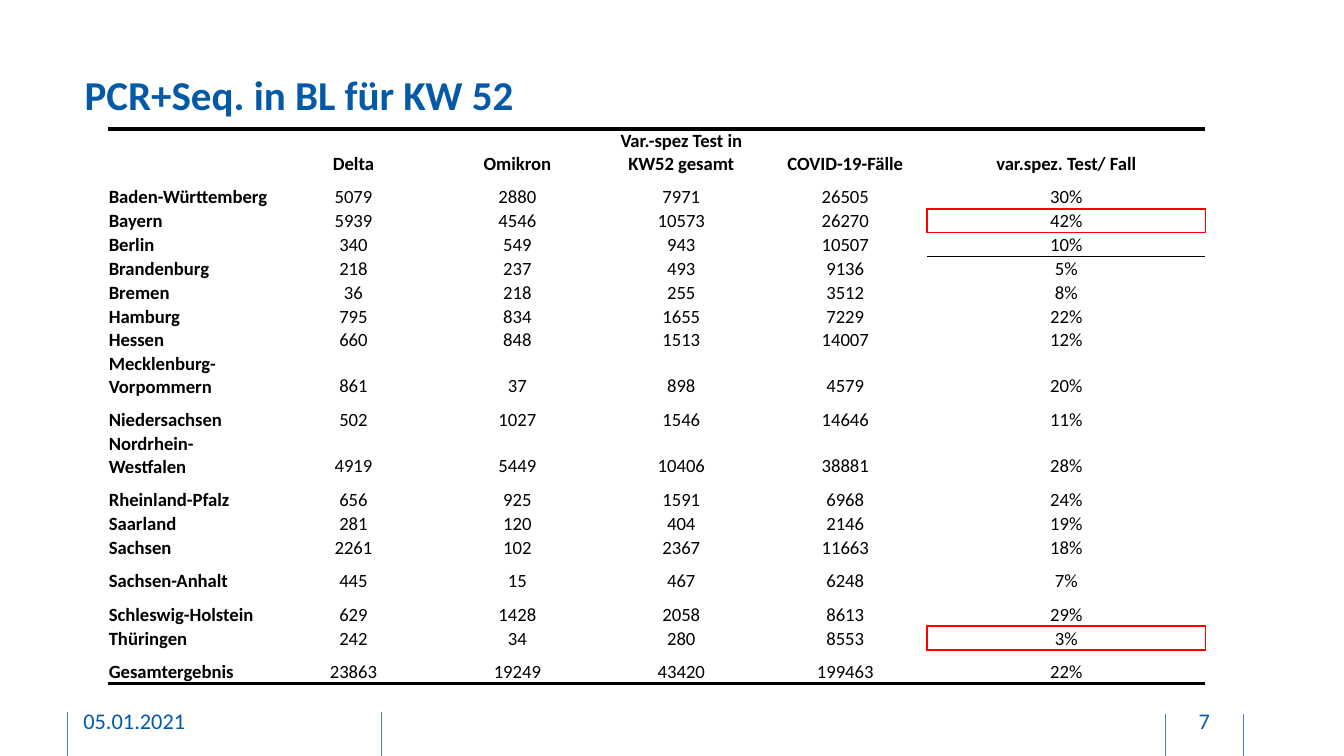
"""Build the slide with the share of variant-specific PCR tests per federal state."""
from dataclasses import dataclass

from lxml import etree
from pptx import Presentation
from pptx.dml.color import RGBColor
from pptx.enum.shapes import MSO_CONNECTOR
from pptx.enum.text import MSO_ANCHOR, PP_ALIGN
from pptx.oxml.ns import qn
from pptx.util import Inches, Pt

LEFT, CENTER = PP_ALIGN.LEFT, PP_ALIGN.CENTER
MIDDLE, BOTTOM = MSO_ANCHOR.MIDDLE, MSO_ANCHOR.BOTTOM
STRAIGHT = MSO_CONNECTOR.STRAIGHT
NO_GRID_STYLE = "{2D5ABB26-0587-4C30-8999-92F81FD0307C}"


@dataclass(frozen=True)
class Theme:
    font: str = "Calibri"
    blue: str = "045AA6"
    rule: str = "4F81BD"
    black: str = "000000"
    white: str = "FFFFFF"
    red: str = "FF0000"
    title: int = 22
    footer: int = 12
    body: int = 10


T = Theme()


def add_text(tf, text, size=T.body, color=T.black, bold=False, align=LEFT):
    tf.word_wrap = True
    p = tf.paragraphs[0]
    p.alignment = align
    p.font.size = Pt(size)
    if text:
        r = p.add_run()
        r.text = text
        r.font.name, r.font.size, r.font.bold = T.font, Pt(size), bold
        r.font.color.rgb = RGBColor.from_string(color)


def add_border(cell, side, color, width):
    ln = etree.SubElement(cell._tc.get_or_add_tcPr(), qn(f"a:ln{side}"), w=str(Pt(width)))
    fill = etree.SubElement(ln, qn("a:solidFill"))
    etree.SubElement(fill, qn("a:srgbClr"), val=color)


prs = Presentation()
prs.slide_width, prs.slide_height = Inches(10), Inches(10 * 9 / 16)
s = prs.slides.add_slide(prs.slide_layouts[6])

for x, y in [(8.67, 5.31), (2.84, 5.3), (0.5, 5.3), (9.25, 5.31)]:
    line = s.shapes.add_connector(STRAIGHT, Inches(x), Inches(y), Inches(x), Inches(y + 0.34))
    line.line.color.rgb = RGBColor.from_string(T.rule)
    line.line.width = Pt(0.5)
    etree.SubElement(line._element.spPr, qn("a:effectLst"))

for text, box, inset, style in [
    ("05.01.2021", (0.62, 5.21, 2.03, 0.3), 0.05, dict(size=T.footer)),
    ("7", (8.69, 5.21, 0.54, 0.3), 0.05, dict(size=T.footer, align=CENTER)),
    ("PCR+Seq. in BL für KW 52", (0.63, 0.31, 8.73, 0.78), 0, dict(size=T.title, bold=True)),
]:
    tf = s.shapes.add_textbox(*map(Inches, box)).text_frame
    tf.margin_left = tf.margin_right = 0
    tf.margin_top = tf.margin_bottom = Inches(inset)
    tf.vertical_anchor = MIDDLE
    add_text(tf, text, color=T.blue, **style)

rows = [
    ("", "Delta", "Omikron", "Var.-spez Test in KW52 gesamt", "COVID-19-Fälle", "var.spez. Test/ Fall"),
    ("Baden-Württemberg", "5079", "2880", "7971", "26505", "30%"),
    ("Bayern", "5939", "4546", "10573", "26270", "42%"),
    ("Berlin", "340", "549", "943", "10507", "10%"),
    ("Brandenburg", "218", "237", "493", "9136", "5%"),
    ("Bremen", "36", "218", "255", "3512", "8%"),
    ("Hamburg", "795", "834", "1655", "7229", "22%"),
    ("Hessen", "660", "848", "1513", "14007", "12%"),
    ("Mecklenburg-Vorpommern", "861", "37", "898", "4579", "20%"),
    ("Niedersachsen", "502", "1027", "1546", "14646", "11%"),
    ("Nordrhein-Westfalen", "4919", "5449", "10406", "38881", "28%"),
    ("Rheinland-Pfalz", "656", "925", "1591", "6968", "24%"),
    ("Saarland", "281", "120", "404", "2146", "19%"),
    ("Sachsen", "2261", "102", "2367", "11663", "18%"),
    ("Sachsen-Anhalt", "445", "15", "467", "6248", "7%"),
    ("Schleswig-Holstein", "629", "1428", "2058", "8613", "29%"),
    ("Thüringen", "242", "34", "280", "8553", "3%"),
    ("Gesamtergebnis", "23863", "19249", "43420", "199463", "22%"),
]
tall_rows = {0, 1, 8, 9, 10, 11, 14, 15, 17}
last_row, last_col = len(rows) - 1, len(rows[0]) - 1

borders = {}
for c in range(last_col + 1):
    borders[0, c, "T"] = borders[last_row, c, "B"] = (T.black, 2)
for i, row in enumerate(rows):
    if row[0] in ("Bayern", "Thüringen"):
        for side in "LRTB":
            borders[i, last_col, side] = (T.red, 1)
        borders[i, last_col - 1, "R"] = (T.red, 1)
        borders[i - 1, last_col, "B"] = borders[i + 1, last_col, "T"] = (T.red, 1)
    if row[0] == "Berlin":
        borders[i, last_col, "B"] = (T.black, 0.5)

frame = s.shapes.add_table(len(rows), len(rows[0]), Inches(0.8), Inches(0.96), Inches(8.16), Inches(4.12))
table = frame.table
table.first_row = table.horz_banding = False
table._tbl.tblPr.find(qn("a:tableStyleId")).text = NO_GRID_STYLE
for c, column in enumerate(table.columns):
    column.width = Inches(2.07 if c == last_col else 1.22)

for i, row in enumerate(rows):
    table.rows[i].height = Inches(0.25 if i in tall_rows else 0.14)
    for c, text in enumerate(row):
        cell = table.cell(i, c)
        cell.margin_left = cell.margin_right = cell.margin_top = Inches(0.01)
        cell.margin_bottom = 0
        cell.vertical_anchor = BOTTOM
        for side in "LRTB":
            if (i, c, side) in borders:
                add_border(cell, side, *borders[i, c, side])
        cell.fill.solid()
        cell.fill.fore_color.rgb = RGBColor.from_string(T.white)
        add_text(cell.text_frame, text, bold=i == 0 or c == 0, align=CENTER if c else LEFT)
frame.height = Inches(4.12)

prs.save("out.pptx")
